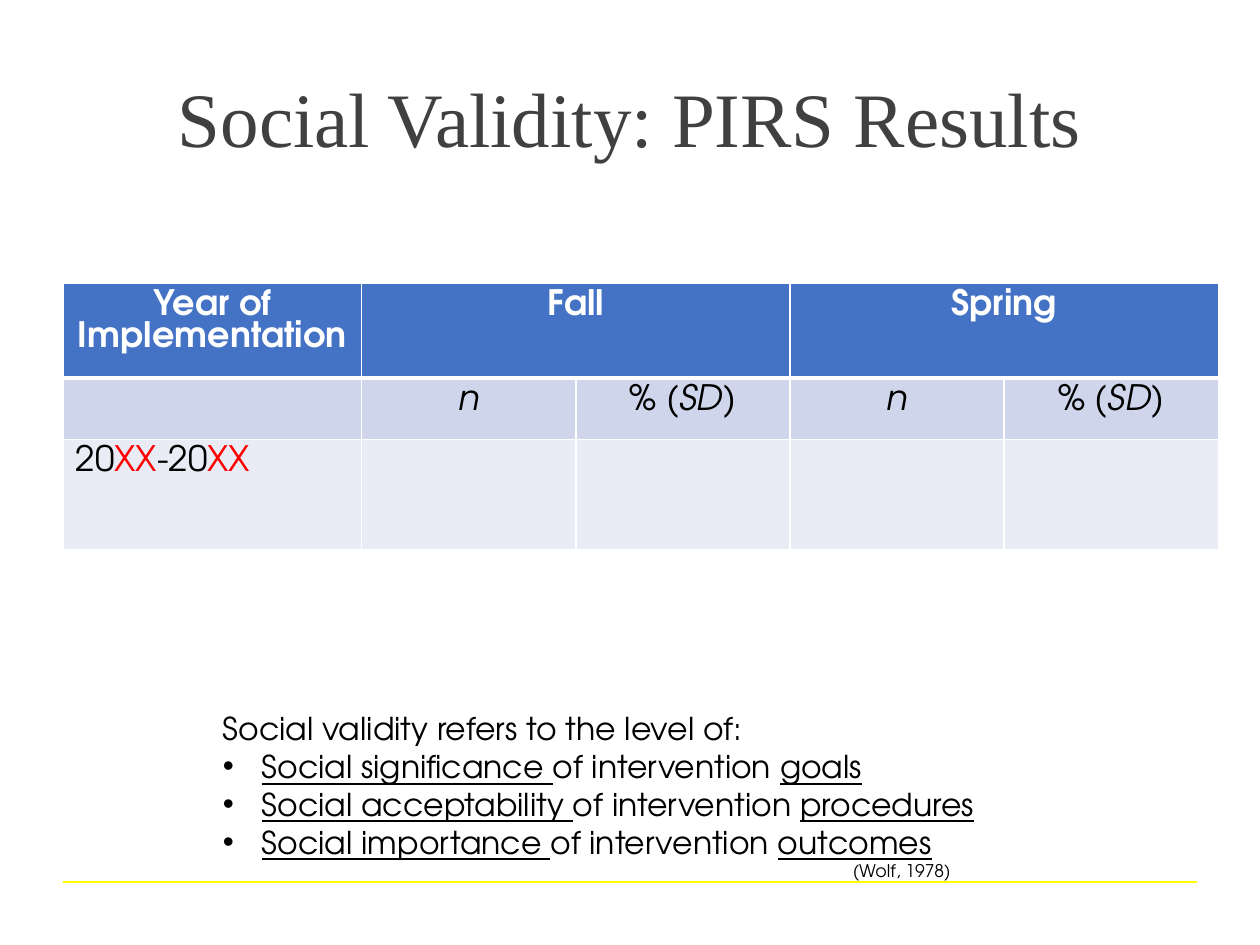
from lxml.etree import SubElement
from pptx import Presentation
from pptx.dml.color import RGBColor
from pptx.enum.shapes import MSO_CONNECTOR
from pptx.enum.text import MSO_ANCHOR, MSO_AUTO_SIZE, PP_ALIGN
from pptx.oxml.ns import qn
from pptx.util import Inches, Pt

COLORS = {
    "title": "404040", "text": "000000", "white": "FFFFFF", "accent": "FF0000",
    "header": "4472C4", "subheader": "CFD5EA", "body": "E9EBF5", "rule": "FFFF00",
}
TITLE_FONT = "Times New Roman"
BODY_FONT = "TeX Gyre Adventor"


def rgb(name):
    return RGBColor.from_string(COLORS[name])


def add_run(paragraph, text, size, color="text", font=BODY_FONT,
            bold=False, italic=False, underline=False):
    run = paragraph.add_run()
    run.text = text
    run.font.name = font
    run.font.size = Pt(size)
    run.font.color.rgb = rgb(color)
    run.font.bold = bold
    run.font.italic = italic
    run.font.underline = underline


def add_title(slide, left, top, width, height):
    title = slide.shapes.title
    title.left, title.top = Inches(left), Inches(top)
    title.width, title.height = Inches(width), Inches(height)
    title.text_frame.vertical_anchor = MSO_ANCHOR.MIDDLE
    heading = title.text_frame.paragraphs[0]
    heading.alignment = PP_ALIGN.CENTER
    add_run(heading, "Social Validity: PIRS Results", 44, "title", TITLE_FONT)


def add_rule(slide, left, top, width):
    rule = slide.shapes.add_connector(
        MSO_CONNECTOR.STRAIGHT, Inches(left), Inches(top), Inches(left + width), Inches(top))
    rule.line.color.rgb = rgb("rule")
    rule.line.width = Pt(0.75)
    SubElement(rule._element.spPr, qn("a:effectLst"))


def set_borders(cell, bottom, top):
    properties = cell._tc.get_or_add_tcPr()
    for side, points in (("L", 1), ("R", 1), ("T", top), ("B", bottom)):
        border = SubElement(properties, qn(f"a:ln{side}"), w=str(Pt(points)))
        fill = SubElement(border, qn("a:solidFill"))
        SubElement(fill, qn("a:srgbClr"), val=COLORS["white"])


def fill_cell(cell, runs, centered):
    paragraph = cell.text_frame.paragraphs[0]
    paragraph.alignment = PP_ALIGN.CENTER if centered else PP_ALIGN.LEFT
    for text, style in runs:
        add_run(paragraph, text, 20, **style)


def add_results_table(slide, left, top, width):
    year_width, row_heights = 2.37, (0.75, 0.49, 0.87)
    head = {"color": "white", "bold": True}
    italic, red = {"italic": True}, {"color": "accent"}
    measures = [[("n", italic)], [("% (", {}), ("SD", italic), (")", {})]]
    rows = [
        [[("Year of Implementation", head)], [("Fall", head)], [], [("Spring", head)], []],
        [[], *measures, *measures],
        [[("20", {}), ("XX", red), ("-20", {}), ("XX", red)], [], [], [], []],
    ]
    table = slide.shapes.add_table(
        3, 5, Inches(left), Inches(top), Inches(width), Inches(sum(row_heights))).table
    for index, column in enumerate(table.columns):
        column.width = Inches(year_width if index == 0 else (width - year_width) / 4)
    for first in (1, 3):
        table.cell(0, first).merge(table.cell(0, first + 1))
    for r, (row, height) in enumerate(zip(rows, row_heights)):
        table.rows[r].height = Inches(height)
        for c, runs in enumerate(row):
            cell = table.cell(r, c)
            set_borders(cell, bottom=3 if r == 0 else 1, top=3 if r == 1 else 1)
            cell.fill.solid()
            cell.fill.fore_color.rgb = rgb(("header", "subheader", "body")[r])
            if runs:
                fill_cell(cell, runs, centered=r < 2)


def set_indent(paragraph, margin, first_line=0):
    properties = paragraph._p.get_or_add_pPr()
    properties.set("marL", str(Inches(margin)))
    properties.set("indent", str(Inches(first_line)))
    return properties


def add_definition(slide, left, top, width, height):
    box = slide.shapes.add_textbox(Inches(left), Inches(top), Inches(width), Inches(height))
    frame = box.text_frame
    frame.word_wrap = True
    frame.auto_size = MSO_AUTO_SIZE.SHAPE_TO_FIT_TEXT
    add_run(frame.paragraphs[0], "Social validity refers to the level of:", 18)
    aspects = (("significance", "goals"), ("acceptability", "procedures"),
               ("importance", "outcomes"))
    for quality, target in aspects:
        aspect = frame.add_paragraph()
        properties = set_indent(aspect, 0.31, -0.31)
        SubElement(properties, qn("a:buFont"), typeface="Arial")
        SubElement(properties, qn("a:buChar"), char="•")
        add_run(aspect, f"Social {quality} ", 18, underline=True)
        add_run(aspect, "of intervention ", 18)
        add_run(aspect, target, 18, underline=True)
    citation = frame.add_paragraph()
    set_indent(citation, 5)
    add_run(citation, "(Wolf, 1978)", 10)


def main():
    deck = Presentation()
    deck.slide_width, deck.slide_height = Inches(10), Inches(7.5)
    slide = deck.slides.add_slide(deck.slide_layouts[5])
    add_rule(slide, 0.5, 7, 9)
    add_results_table(slide, 0.5, 2.25, 9.17)
    add_title(slide, 0.5, 0.3, 9, 1.25)
    add_definition(slide, 1.67, 5.58, 7.5, 1.48)
    deck.save("out.pptx")


if __name__ == "__main__":
    main()
